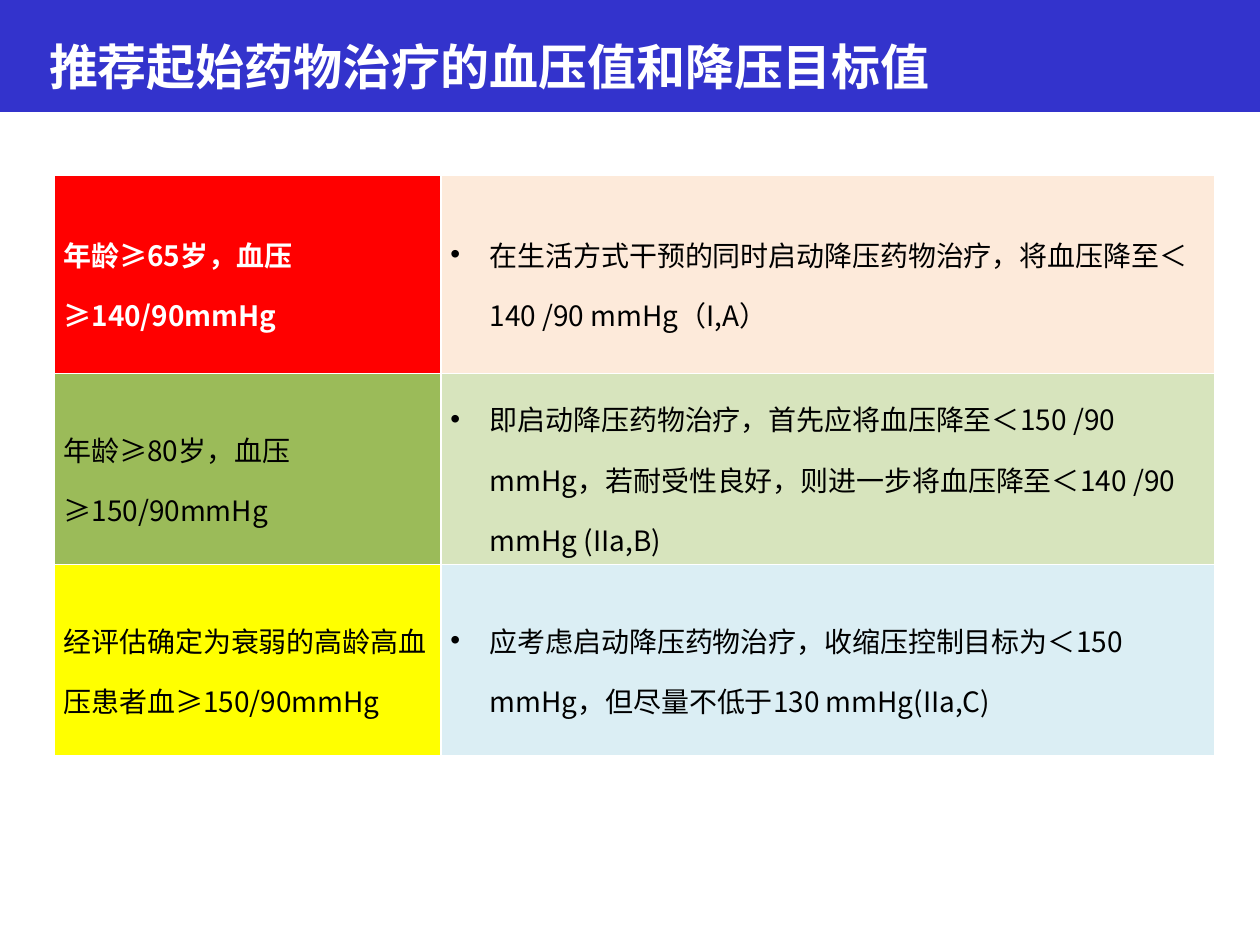
from typing import NamedTuple

from lxml import etree
from pptx import Presentation
from pptx.dml.color import RGBColor
from pptx.enum import shapes, text
from pptx.oxml.ns import qn
from pptx.util import Pt

FONT = "Noto Sans CJK SC"
COLORS = {
    "band": "3333CC", "white": "FFFFFF", "black": "000000",
    "red": "FF0000", "peach": "FDEADA",
    "green": "9BBB59", "pale_green": "D7E4BD",
    "yellow": "FFFF00", "pale_blue": "DBEEF4",
}


class Advice(NamedTuple):
    patient: str
    treatment: str
    patient_fill: str
    treatment_fill: str
    height: float
    emphasis: bool = False


ADVICE = [
    Advice("年龄≥65岁，血压≥140/90mmHg",
           "在生活方式干预的同时启动降压药物治疗，将血压降至＜140 /90 mmHg（I,A）",
           "red", "peach", 113.5, True),
    Advice("年龄≥80岁，血压≥150/90mmHg",
           "即启动降压药物治疗，首先应将血压降至＜150 /90 mmHg，"
           "若耐受性良好，则进一步将血压降至＜140 /90 mmHg (IIa,B)",
           "green", "pale_green", 106),
    Advice("经评估确定为衰弱的高龄高血压患者血≥150/90mmHg",
           "应考虑启动降压药物治疗，收缩压控制目标为＜150 mmHg，"
           "但尽量不低于130 mmHg(IIa,C)",
           "yellow", "pale_blue", 109.5),
]


def rgb(name: str) -> RGBColor:
    return RGBColor.from_string(COLORS[name])


def write(tf, words: str, *, size: float, color: str = "black", bold: bool = False,
          spacing: float = 1.0, bullet: bool = False) -> None:
    tf.word_wrap = True
    p = tf.paragraphs[0]
    p.alignment = text.PP_ALIGN.LEFT
    p.line_spacing = spacing
    if bullet:
        pPr = p._p.get_or_add_pPr()
        pPr.set("marL", str(Pt(22.5)))
        pPr.set("indent", str(-Pt(22.5)))
        etree.SubElement(pPr, qn("a:buFont"), typeface="Arial")
        etree.SubElement(pPr, qn("a:buChar"), char="•")
    r = p.add_run()
    r.text = words
    r.font.size = Pt(size)
    r.font.bold = bold
    r.font.color.rgb = rgb(color)
    r.font.name = FONT
    etree.SubElement(r._r.get_or_add_rPr(), qn("a:ea"), typeface=FONT)


def style_cell(cell, fill: str) -> None:
    tcPr = cell._tc.get_or_add_tcPr()
    for side in ("lnL", "lnR", "lnT", "lnB"):
        ln = etree.SubElement(tcPr, qn(f"a:{side}"), w=str(Pt(1)))
        line_fill = etree.SubElement(ln, qn("a:solidFill"))
        etree.SubElement(line_fill, qn("a:srgbClr"), val=COLORS["white"])
    cell.fill.solid()
    cell.fill.fore_color.rgb = rgb(fill)
    cell.vertical_anchor = text.MSO_ANCHOR.MIDDLE
    cell.margin_left = cell.margin_right = Pt(5.4)
    cell.margin_top = cell.margin_bottom = Pt(2.7)


def add_band(s) -> None:
    sp = s.shapes.add_shape(shapes.MSO_SHAPE.RECTANGLE, 0, Pt(-2), Pt(720), Pt(66))
    sp.shadow.inherit = False
    sp.fill.solid()
    sp.fill.fore_color.rgb = rgb("band")
    sp.line.fill.background()
    s.shapes._spTree.insert(2, sp._element)  # behind the title


def add_title(s, words: str) -> None:
    title = s.shapes.title
    title.left, title.top, title.width, title.height = Pt(20), Pt(3.6), Pt(700), Pt(68.4)
    tf = title.text_frame
    tf.auto_size = text.MSO_AUTO_SIZE.NONE
    tf.vertical_anchor = text.MSO_ANCHOR.MIDDLE
    tf.margin_left = tf.margin_right = Pt(8)
    tf.margin_top = tf.margin_bottom = Pt(3.6)
    write(tf, words, size=28, color="white", bold=True)


def add_advice_table(s, rows: list[Advice]) -> None:
    widths = (221, 442)
    table = s.shapes.add_table(len(rows), 2, Pt(31), Pt(100), Pt(sum(widths)),
                               Pt(sum(row.height for row in rows))).table
    for column, width in zip(table.columns, widths):
        column.width = Pt(width)
    for i, row in enumerate(rows):
        table.rows[i].height = Pt(row.height)
        patient, treatment = table.cell(i, 0), table.cell(i, 1)
        style_cell(patient, row.patient_fill)
        style_cell(treatment, row.treatment_fill)
        write(patient.text_frame, row.patient, size=16, spacing=1.5,
              color="white" if row.emphasis else "black", bold=row.emphasis)
        write(treatment.text_frame, row.treatment, size=16, spacing=1.5, bullet=True)


def main() -> None:
    prs = Presentation()
    prs.slide_width, prs.slide_height = Pt(720), Pt(540)
    s = prs.slides.add_slide(prs.slide_layouts[5])  # title only

    # Heading
    add_band(s)
    add_title(s, "推荐起始药物治疗的血压值和降压目标值")

    # Recommendations by patient group
    add_advice_table(s, ADVICE)
    prs.save("out.pptx")


if __name__ == "__main__":
    main()
